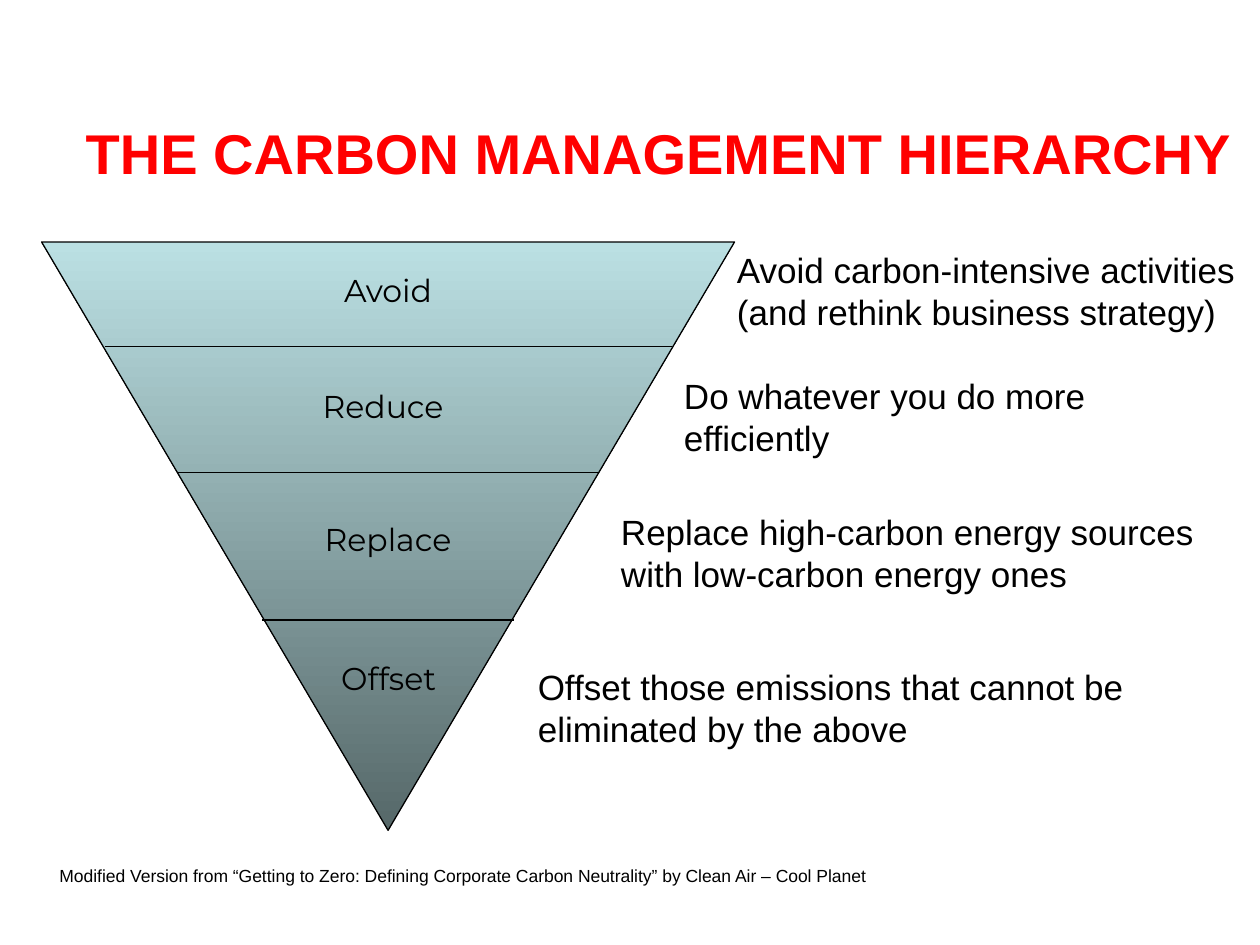
from dataclasses import dataclass

from lxml import etree
from pptx import Presentation
from pptx.dml.color import RGBColor
from pptx.enum.shapes import MSO_CONNECTOR, MSO_SHAPE
from pptx.enum.text import MSO_ANCHOR, PP_ALIGN
from pptx.oxml.ns import qn
from pptx.util import Inches, Pt

LEFT, CENTER = PP_ALIGN.LEFT, PP_ALIGN.CENTER
MIDDLE = MSO_ANCHOR.MIDDLE
STRAIGHT = MSO_CONNECTOR.STRAIGHT
TRIANGLE = MSO_SHAPE.ISOSCELES_TRIANGLE

COLORS = {
    "title": "FF0000",
    "text": "000000",
    "outline": "000000",
    "tip": "566869",
    "base": "BBE0E3",
}
OUTLINE_WIDTH = Pt(0.75)
PYRAMID_CENTER = 3.08


@dataclass(frozen=True)
class Box:
    left: float
    top: float
    width: float
    height: float

    def inches(self) -> tuple:
        return tuple(map(Inches, (self.left, self.top, self.width, self.height)))


@dataclass(frozen=True)
class Tier:
    label: str
    label_box: Box
    advice: str
    advice_box: Box


@dataclass(frozen=True)
class Divider:
    top: float
    half_width: float


TIERS = (
    Tier("Avoid", Box(0.74, 2.1, 4.68, 0.4),
         "Avoid carbon-intensive activities (and rethink business strategy)",
         Box(5.75, 1.92, 4.25, 0.77)),
    Tier("Reduce", Box(1, 3.02, 4.08, 0.4),
         "Do whatever you do more efficiently",
         Box(5.33, 2.92, 4.25, 0.77)),
    Tier("Replace", Box(1.58, 4.08, 3, 0.4),
         "Replace high-carbon energy sources with low-carbon energy ones",
         Box(4.83, 4, 4.92, 0.77)),
    Tier("Offset", Box(2, 5.18, 2.17, 0.4),
         "Offset those emissions that cannot be eliminated by the above",
         Box(4.17, 5.23, 5.33, 0.77)),
)
DIVIDERS = (Divider(2.75, 2.25), Divider(3.75, 1.67), Divider(4.92, 1))


def rgb(name: str) -> RGBColor:
    return RGBColor.from_string(COLORS[name])


def write(shape, text: str, *, size: float, font: str = "Arial",
          color: str = "text", bold: bool = False, align=LEFT) -> None:
    frame = shape.text_frame
    frame.word_wrap = True
    paragraph = frame.paragraphs[0]
    paragraph.alignment = align
    run = paragraph.add_run()
    run.text = text
    run.font.size = Pt(size)
    run.font.name = font
    run.font.bold = bold
    run.font.color.rgb = rgb(color)


def add_text(slide, box: Box, text: str, **text_format) -> None:
    write(slide.shapes.add_textbox(*box.inches()), text, **text_format)


def add_title(slide, box: Box, text: str) -> None:
    title = slide.shapes.title
    title.left, title.top, title.width, title.height = box.inches()
    title.text_frame.vertical_anchor = MIDDLE
    write(title, text, size=32, color="title", bold=True)


def set_outline(shape) -> None:
    shape.line.color.rgb = rgb("outline")
    shape.line.width = OUTLINE_WIDTH


def add_pyramid(slide, box: Box) -> None:
    """Draw the inverted triangle, shaded from its light base to its dark tip."""
    pyramid = slide.shapes.add_shape(TRIANGLE, *box.inches())
    pyramid.rotation = 180
    pyramid.shadow.inherit = False
    pyramid.fill.gradient()
    pyramid.fill.gradient_angle = 270
    for stop, name in zip(pyramid.fill.gradient_stops, ("tip", "base")):
        stop.color.rgb = rgb(name)
    set_outline(pyramid)


def add_divider(slide, divider: Divider) -> None:
    line = slide.shapes.add_connector(
        STRAIGHT,
        Inches(PYRAMID_CENTER - divider.half_width), Inches(divider.top),
        Inches(PYRAMID_CENTER + divider.half_width), Inches(divider.top))
    set_outline(line)
    etree.SubElement(line._element.spPr, qn("a:effectLst"))


def main() -> None:
    presentation = Presentation()
    presentation.slide_width = Inches(10)
    presentation.slide_height = Inches(7.5)
    slide = presentation.slides.add_slide(presentation.slide_layouts[5])

    add_title(slide, Box(0.58, 0.58, 9.42, 1.25), "THE CARBON MANAGEMENT HIERARCHY")
    add_pyramid(slide, Box(0.33, 1.92, 5.5, 4.67))
    for divider in DIVIDERS:
        add_divider(slide, divider)
    for tier in TIERS:
        add_text(slide, tier.label_box, tier.label,
                 size=18, font="Montserrat", align=CENTER)
        add_text(slide, tier.advice_box, tier.advice, size=20)
    add_text(slide, Box(0.17, 6.82, 7, 0.27),
             "Modified Version from “Getting to Zero: Defining Corporate "
             "Carbon Neutrality” by Clean Air – Cool Planet",
             size=10, align=CENTER)

    presentation.save("out.pptx")


if __name__ == "__main__":
    main()
